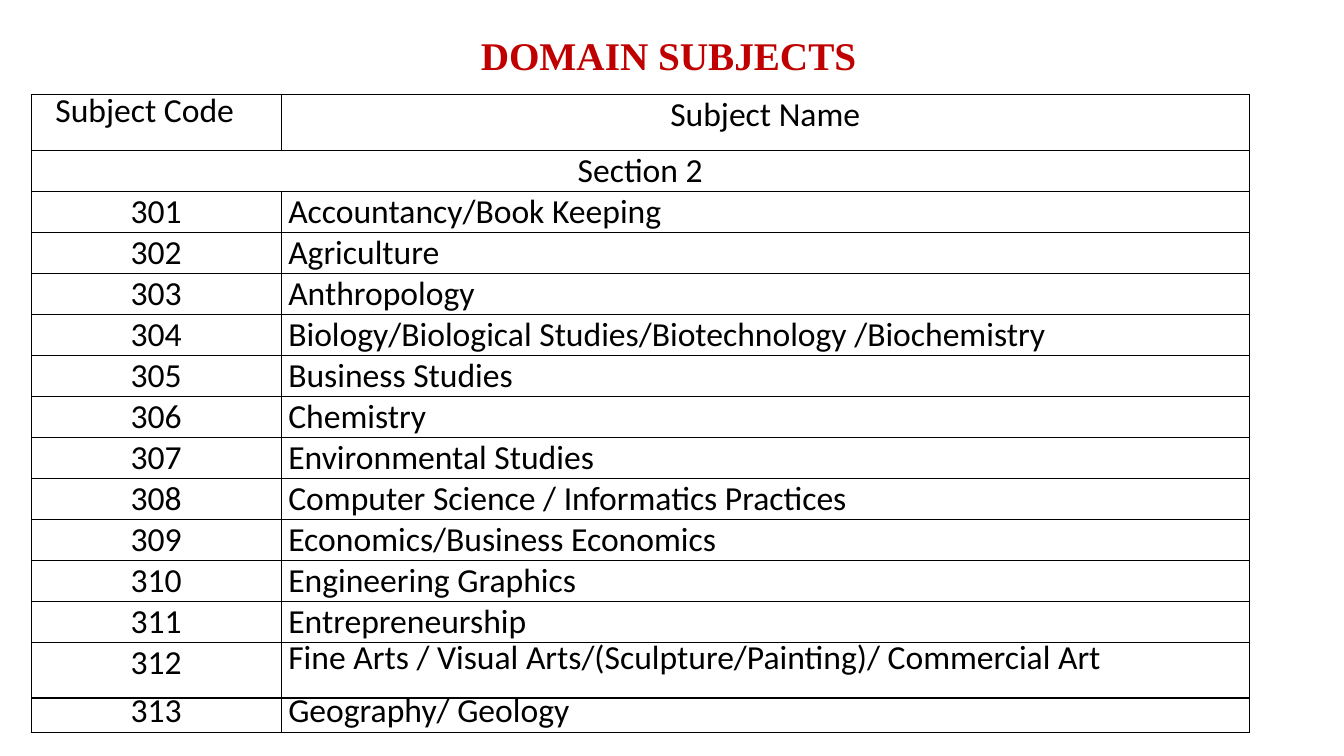
from dataclasses import dataclass

from lxml.etree import SubElement
from pptx import Presentation
from pptx.dml.color import RGBColor
from pptx.enum.text import PP_ALIGN
from pptx.oxml.ns import qn
from pptx.util import Inches, Pt


@dataclass(frozen=True)
class Theme:
    """Colours, fonts and type sizes of the slide."""
    title_color: str = "C00000"
    ink: str = "000000"
    title_font: str = "Times New Roman"
    table_font: str = "Calibri"
    title_size: float = 28
    table_size: float = 24
    border_width: float = 1


THEME = Theme()
HEADINGS = ("Subject Code", "Subject Name")
SECTION = "Section 2"
FIRST_CODE = 301
SUBJECTS = (
    "Accountancy/Book Keeping",
    "Agriculture",
    "Anthropology",
    "Biology/Biological Studies/Biotechnology /Biochemistry",
    "Business Studies",
    "Chemistry",
    "Environmental Studies",
    "Computer Science / Informatics Practices",
    "Economics/Business Economics",
    "Engineering Graphics",
    "Entrepreneurship",
    "Fine Arts / Visual Arts/(Sculpture/Painting)/ Commercial Art",
    "Geography/ Geology",
)
COLUMN_WIDTHS = (2.48, 9.6)
ROW_HEIGHT, TALL_ROW, LAST_ROW = 0.4, 0.55, 0.34


def style_text(paragraph, font, size, color, bold=False):
    """Format every run of a paragraph."""
    for span in paragraph.runs:
        span.font.name = font
        span.font.size = Pt(size)
        span.font.bold = bold
        span.font.color.rgb = RGBColor.from_string(color)


def add_borders(cell):
    """Draw a thin line on all four sides of a cell."""
    properties = cell._tc.get_or_add_tcPr()
    for index, side in enumerate(("a:lnL", "a:lnR", "a:lnT", "a:lnB")):
        line = properties.makeelement(qn(side), {"w": str(Pt(THEME.border_width))})
        fill = SubElement(line, qn("a:solidFill"))
        SubElement(fill, qn("a:srgbClr"), val=THEME.ink)
        properties.insert(index, line)


def fill_cell(cell, text, align=PP_ALIGN.CENTER, left=0, top=0, line_height=None):
    """Write one cell, optionally with a fixed line height below a top margin."""
    cell.margin_left, cell.margin_top = Inches(left), Pt(top)
    cell.margin_right = cell.margin_bottom = 0
    cell.text_frame.text = text
    para = cell.text_frame.paragraphs[0]
    para.alignment = align
    if line_height:
        para.line_spacing = Pt(line_height)
    style_text(para, THEME.table_font, THEME.table_size, THEME.ink)


def add_title(slide, text, left, top, width, height):
    """Place the slide title in its box."""
    box = slide.shapes.add_textbox(
        Inches(left), Inches(top), Inches(width), Inches(height))
    box.text_frame.word_wrap = True
    box.text_frame.text = text
    style_text(box.text_frame.paragraphs[0], THEME.title_font,
               THEME.title_size, THEME.title_color, bold=True)


def add_subject_table(slide, left, top):
    """Place the table of subject codes and names at the given corner."""
    heights = [TALL_ROW] + [ROW_HEIGHT] * (len(SUBJECTS) - 1) + [TALL_ROW, LAST_ROW]
    table = slide.shapes.add_table(
        len(heights), len(COLUMN_WIDTHS), Inches(left), Inches(top),
        Inches(sum(COLUMN_WIDTHS)), Inches(sum(heights))).table
    table.first_row = table.horz_banding = False
    for column, width in zip(table.columns, COLUMN_WIDTHS):
        column.width = Inches(width)
    for row, height in zip(table.rows, heights):
        row.height = Inches(height)
    for cell in table.iter_cells():
        cell.fill.background()
        add_borders(cell)

    fill_cell(table.cell(0, 0), HEADINGS[0], PP_ALIGN.LEFT, 0.24, 13.4, 12.6)
    fill_cell(table.cell(0, 1), HEADINGS[1])
    table.cell(1, 0).merge(table.cell(1, 1))
    fill_cell(table.cell(1, 0), SECTION)

    last = len(SUBJECTS) - 1
    code_spacing = {last: (12.5, 11.7)}
    name_spacing = {last - 1: (13.4, 12.6), last: (12.5, 11.7)}
    for index, subject in enumerate(SUBJECTS):
        code_cell, name_cell = table.rows[index + 2].cells
        code_top, code_line = code_spacing.get(index, (0, None))
        name_top, name_line = name_spacing.get(index, (0, None))
        fill_cell(code_cell, str(FIRST_CODE + index),
                  top=code_top, line_height=code_line)
        fill_cell(name_cell, subject, PP_ALIGN.LEFT, 0.07, name_top, name_line)


def main():
    """Build and save the deck."""
    deck = Presentation()
    deck.slide_width, deck.slide_height = Inches(13.33), Inches(7.5)
    page = deck.slides.add_slide(deck.slide_layouts[6])
    add_subject_table(page, 0.31, 0.94)
    add_title(page, "DOMAIN SUBJECTS", 4.67, 0.26, 4.82, 0.57)
    deck.save("out.pptx")


if __name__ == "__main__":
    main()
